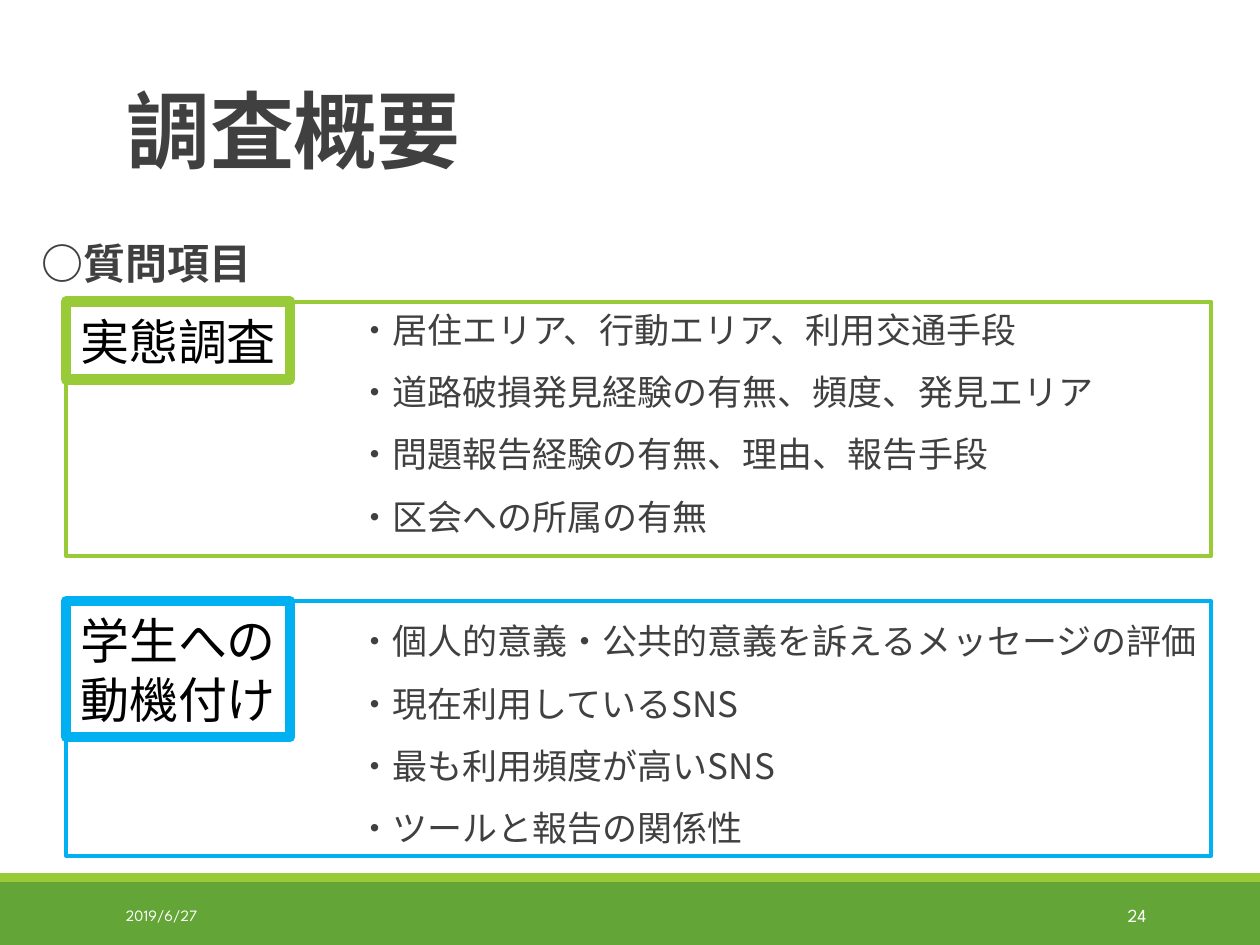
from dataclasses import dataclass

from pptx import Presentation
from pptx.dml.color import RGBColor
from pptx.enum.shapes import MSO_SHAPE as Preset
from pptx.enum.text import MSO_ANCHOR as Anchor, PP_ALIGN as Align
from pptx.oxml.ns import qn
from pptx.shapes.autoshape import Shape
from pptx.slide import Slide
from pptx.text.text import _Paragraph as Paragraph
from pptx.util import Cm, Pt

COLORS = {
    "green": "63A537",
    "lime": "99CB38",
    "blue": "00B0F0",
    "ink": "404040",
    "black": "000000",
    "white": "FFFFFF",
}
LATIN = "League Spartan"
JAPANESE = "Noto Sans CJK JP"
FRAME_LEFT, FRAME_WIDTH, FRAME_HEIGHT = 1.33, 23.09, 5.13
LABEL_WIDTH = 4.52
ITEM_INDENT = Cm(6.37)


@dataclass(frozen=True)
class Box:
    left: float
    top: float
    width: float
    height: float

    def lengths(self) -> tuple[Cm, Cm, Cm, Cm]:
        return Cm(self.left), Cm(self.top), Cm(self.width), Cm(self.height)


@dataclass(frozen=True)
class Section:
    label: str
    top: float
    label_height: float
    color: str
    items: tuple[str, ...]
    space_before: float


SECTIONS = (
    Section("実態調査", 6.08, 1.57, "lime", (
        "・居住エリア、行動エリア、利用交通手段",
        "・道路破損発見経験の有無、頻度、発見エリア",
        "・問題報告経験の有無、理由、報告手段",
        "・区会への所属の有無",
    ), 12),
    Section("学生への\n動機付け", 12.12, 2.74, "blue", (
        "・個人的意義・公共的意義を訴えるメッセージの評価",
        "・現在利用しているSNS",
        "・最も利用頻度が高いSNS",
        "・ツールと報告の関係性",
    ), 47.6),
)


def rgb(color: str) -> RGBColor:
    return RGBColor.from_string(COLORS[color])


def style(paragraph: Paragraph, size: float, color: str, font: str = JAPANESE,
          bold: bool = False, tracking: int = 0) -> None:
    for run in paragraph.runs:
        run.font.size = Pt(size)
        run.font.bold = bold
        run.font.name = font
        run.font.color.rgb = rgb(color)
        properties = run.font._element
        east_asian = properties.makeelement(qn("a:ea"), {"typeface": JAPANESE})
        properties.find(qn("a:latin")).addnext(east_asian)
        if tracking:
            properties.set("spc", str(tracking))


def add_bar(slide: Slide, box: Box, color: str) -> None:
    bar = slide.shapes.add_shape(Preset.RECTANGLE, *box.lengths())
    bar.shadow.inherit = False
    bar.fill.solid()
    bar.fill.fore_color.rgb = rgb(color)
    bar.line.fill.background()


def add_outline(slide: Slide, box: Box, color: str, weight: float) -> Shape:
    outline = slide.shapes.add_shape(Preset.RECTANGLE, *box.lengths())
    outline.shadow.inherit = False
    outline.fill.background()
    outline.line.color.rgb = rgb(color)
    outline.line.width = Pt(weight)
    return outline


def add_text(slide: Slide, box: Box, text: str, anchor: Anchor) -> Shape:
    text_box = slide.shapes.add_textbox(*box.lengths())
    text_box.text_frame.word_wrap = True
    text_box.text_frame.vertical_anchor = anchor
    text_box.text_frame.text = text
    return text_box


def add_title(slide: Slide) -> None:
    frame = add_text(slide, Box(2.31, 0.79, 20.96, 2.95), "調査概要", Anchor.BOTTOM).text_frame
    frame.paragraphs[0].line_spacing = 0.85
    style(frame.paragraphs[0], 48, "ink", bold=True, tracking=-50)


def add_questions(slide: Slide) -> None:
    frame = add_text(slide, Box(0.58, 4.78, 24.33, 12.73), "○質問項目", Anchor.TOP).text_frame
    heading = frame.paragraphs[0]
    heading.line_spacing = 0.9
    heading.space_after = Pt(2)
    style(heading, 24, "ink", bold=True)
    for section in SECTIONS:
        for index, item in enumerate(section.items):
            question = frame.add_paragraph()
            question.text = item
            question.line_spacing = 0.9
            question.space_before = Pt(12 if index else section.space_before)
            question.space_after = Pt(2)
            question._p.get_or_add_pPr().set("marL", str(ITEM_INDENT))
            style(question, 20, "ink")


def add_label(slide: Slide, section: Section) -> None:
    box = Box(FRAME_LEFT, section.top, LABEL_WIDTH, section.label_height)
    frame = add_outline(slide, box, section.color, 6).text_frame
    frame.word_wrap = True
    frame.vertical_anchor = Anchor.MIDDLE
    frame.text = section.label
    for line in frame.paragraphs:
        line.alignment = Align.CENTER
        style(line, 28, "black", LATIN)


def add_footer(slide: Slide, box: Box, text: str, size: float, align: Align) -> None:
    line = add_text(slide, box, text, Anchor.MIDDLE).text_frame.paragraphs[0]
    line.alignment = align
    style(line, size, "white", LATIN)


def main() -> None:
    deck = Presentation()
    deck.slide_width, deck.slide_height = Cm(25.4), Cm(19.05)
    slide = deck.slides.add_slide(deck.slide_layouts[6])

    add_bar(slide, Box(0, 17.78, 25.4, 1.27), "green")
    add_bar(slide, Box(0, 17.6, 25.4, 0.18), "lime")
    add_title(slide)
    add_questions(slide)
    for section in SECTIONS:
        add_label(slide, section)
    for section in SECTIONS:
        frame_box = Box(FRAME_LEFT, section.top, FRAME_WIDTH, FRAME_HEIGHT)
        add_outline(slide, frame_box, section.color, 2.25)
    add_footer(slide, Box(2.29, 17.94, 5.16, 1.02), "2019/6/27", 9, Align.LEFT)
    add_footer(slide, Box(20.62, 17.94, 2.74, 1.02), "24", 10.5, Align.RIGHT)

    deck.save("out.pptx")


if __name__ == "__main__":
    main()
